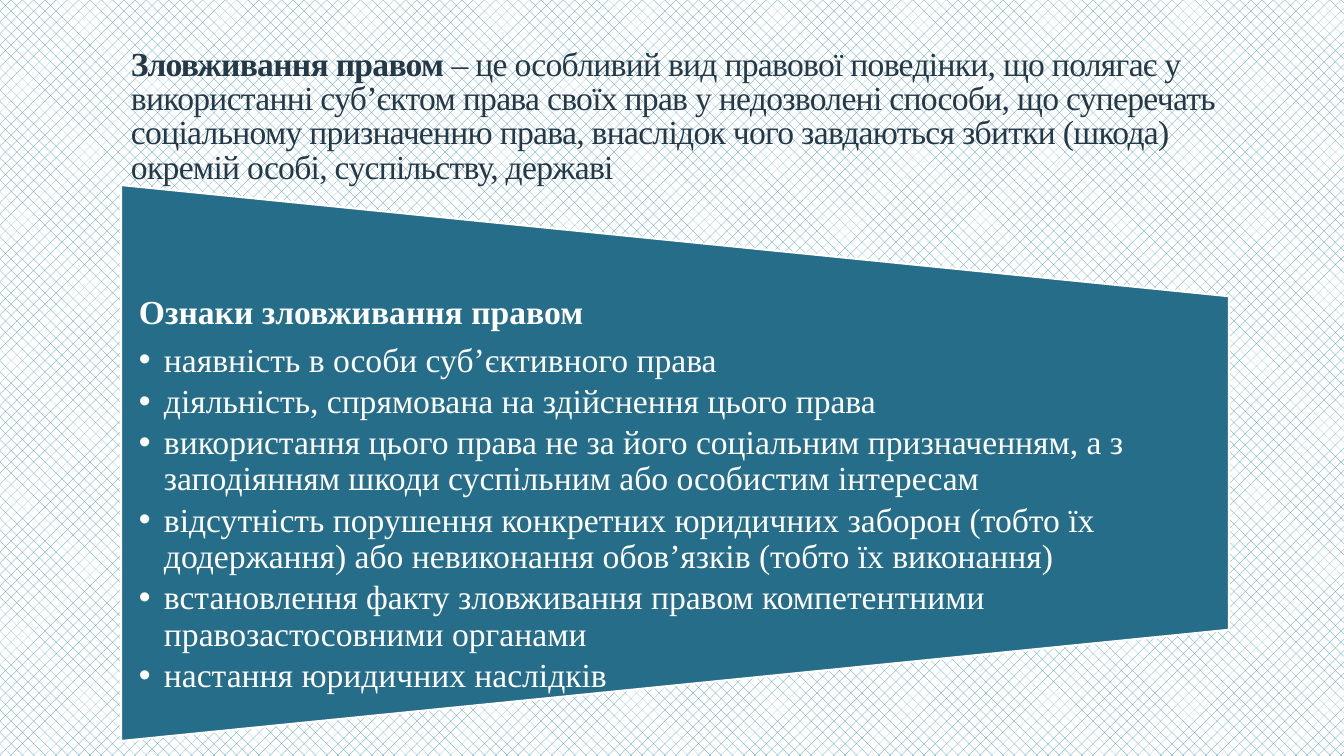
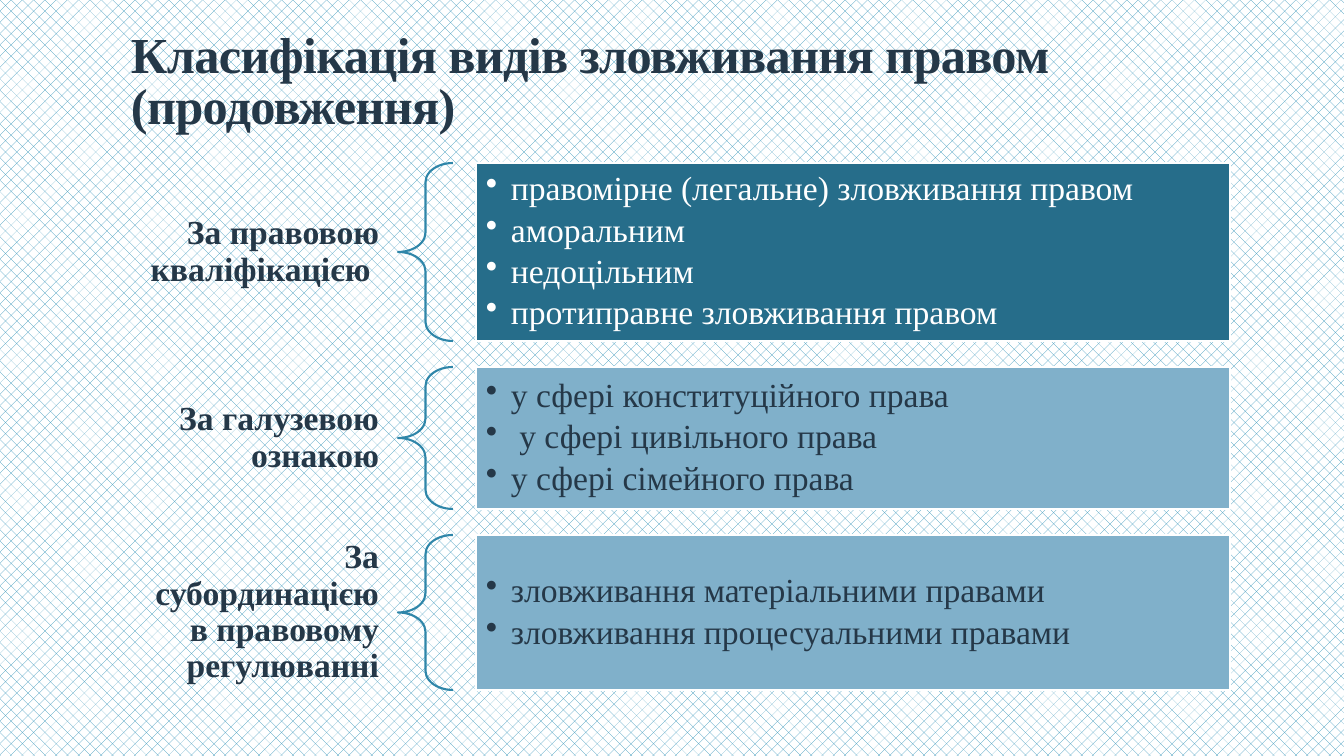
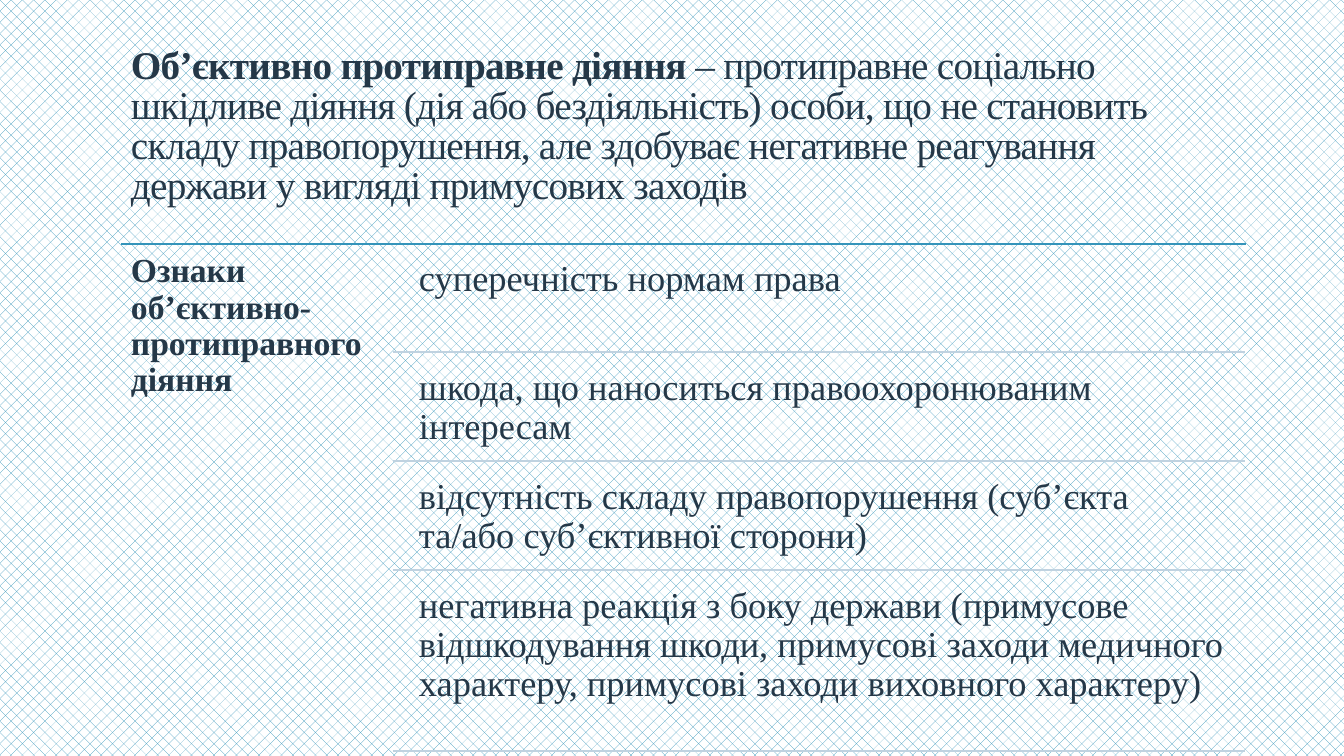
from dataclasses import dataclass

from lxml import etree
from pptx import Presentation
from pptx.dml.color import RGBColor
from pptx.enum.dml import MSO_PATTERN
from pptx.enum.shapes import MSO_CONNECTOR, MSO_SHAPE
from pptx.enum.text import MSO_ANCHOR, MSO_AUTO_SIZE, PP_ALIGN
from pptx.oxml.ns import qn
from pptx.util import Pt

TOP, MIDDLE, BOTTOM = MSO_ANCHOR.TOP, MSO_ANCHOR.MIDDLE, MSO_ANCHOR.BOTTOM
LEFT, RIGHT = PP_ALIGN.LEFT, PP_ALIGN.RIGHT
RECTANGLE, BRACE = MSO_SHAPE.RECTANGLE, MSO_SHAPE.LEFT_BRACE
TRAPEZOID = MSO_SHAPE.FLOWCHART_MANUAL_OPERATION
STRAIGHT = MSO_CONNECTOR.STRAIGHT
HATCH = MSO_PATTERN.PERCENT_25
NO_AUTOFIT = MSO_AUTO_SIZE.NONE
TITLE_ONLY, TITLE_AND_BODY = 5, 1

EMU_PER_PX = 914400 / 100.8
SLIDE_W, SLIDE_H = 1344, 756
MARGIN, CONTENT_W = 121, 1109


def px(length):
    return round(length * EMU_PER_PX)


@dataclass(frozen=True)
class Theme:
    font: str = "Times New Roman"
    ink: str = "253848"
    white: str = "FFFFFF"
    accent: str = "3494BA"
    deep: str = "266D8A"
    soft: str = "80B0CA"
    brace: str = "2F86A9"
    divider: str = "BFD2E0"
    heading_size: int = 36
    definition_size: int = 28
    row_size: int = 26
    text_size: int = 24
    line_width: float = 1.5
    title_spacing: float = 0.85
    text_spacing: float = 0.9
    block_gap: float = 0.35
    bullet_gap: float = 0.15
    bullet_indent: int = 25
    tracking: int = -50


class Deck:
    def __init__(self, theme):
        self.theme = theme
        self.slide = None
        self.prs = Presentation()
        self.prs.slide_width, self.prs.slide_height = px(SLIDE_W), px(SLIDE_H)
        fill = self.prs.slide_master.background.fill
        fill.patterned()
        fill.pattern = HATCH
        fill.fore_color.rgb = RGBColor.from_string(theme.accent)
        fill.back_color.rgb = RGBColor.from_string(theme.white)

    def new_slide(self, layout=TITLE_ONLY):
        self.slide = self.prs.slides.add_slide(self.prs.slide_layouts[layout])

    # Text
    def frame(self, shape, anchor, inset_x, inset_y):
        frame = shape.text_frame
        frame.word_wrap = True
        frame.auto_size = NO_AUTOFIT
        frame.vertical_anchor = anchor
        frame.margin_left = frame.margin_right = px(inset_x)
        frame.margin_top = frame.margin_bottom = px(inset_y)
        return frame

    def paragraph(self, frame, runs, size, color, align=LEFT, spacing=None,
                  gap=0, bullet=False, tracking=None):
        """Add a paragraph of (text, bold) runs; gap is a share of the size."""
        first = frame.paragraphs[0]
        par = frame.add_paragraph() if first.runs else first
        par.alignment = align
        par.line_spacing = spacing or self.theme.text_spacing
        par.space_before = Pt(0)
        par.space_after = Pt(size * gap)
        self.bullet(par, bullet)
        for text, bold in runs:
            run = par.add_run()
            run.text = text
            run.font.name = self.theme.font
            run.font.size = Pt(size)
            run.font.bold = bold
            run.font.color.rgb = RGBColor.from_string(color)
            if tracking:
                run.font._element.set("spc", str(tracking))

    def bullet(self, par, shown):
        indent = px(self.theme.bullet_indent) if shown else 0
        props = par._p.get_or_add_pPr()
        props.set("marL", str(indent))
        props.set("indent", str(-indent))
        if shown:
            par.level = 1
            etree.SubElement(props, qn("a:buChar")).set("char", "•")
        else:
            etree.SubElement(props, qn("a:buNone"))

    def bullets(self, frame, items, color):
        for item in items:
            self.paragraph(frame, [(item, False)], self.theme.text_size, color,
                           gap=self.theme.bullet_gap, bullet=True)

    def place(self, shape, left, top, width, height):
        shape.left, shape.top = px(left), px(top)
        shape.width, shape.height = px(width), px(height)

    def title(self, top, height, size, runs):
        title = self.slide.shapes.title
        self.place(title, MARGIN, top, CONTENT_W, height)
        self.paragraph(self.frame(title, BOTTOM, 10, 5), runs, size,
                       self.theme.ink, spacing=self.theme.title_spacing,
                       tracking=self.theme.tracking)

    def body(self, box, heading, items, color):
        body = self.slide.placeholders[1]
        self.place(body, *box)
        body.element.getparent().append(body.element)  # in front of the panel
        frame = self.frame(body, TOP, 17, 0)
        self.paragraph(frame, [(heading, True)], self.theme.text_size, color,
                       gap=self.theme.block_gap)
        self.bullets(frame, items, color)

    def text(self, box, words, size, bold=False, align=LEFT, anchor=TOP,
             inset_x=10, inset_y=10):
        shape = self.slide.shapes.add_textbox(*map(px, box))
        self.paragraph(self.frame(shape, anchor, inset_x, inset_y),
                       [(words, bold)], size, self.theme.ink, align,
                       gap=self.theme.block_gap)

    # Shapes and lines
    def outline(self, item, color):
        item.line.color.rgb = RGBColor.from_string(color)
        item.line.width = Pt(self.theme.line_width)

    def shape(self, kind, box, line, fill=None):
        shape = self.slide.shapes.add_shape(kind, *map(px, box))
        shape.shadow.inherit = False
        self.outline(shape, line)
        if fill:
            shape.fill.solid()
            shape.fill.fore_color.rgb = RGBColor.from_string(fill)
        else:
            shape.fill.background()
        return shape

    def list_panel(self, box, items, fill, color):
        panel = self.shape(RECTANGLE, box, self.theme.white, fill)
        self.bullets(self.frame(panel, MIDDLE, 10, 10), items, color)

    def rule(self, left, right, y, color):
        rule = self.slide.shapes.add_connector(
            STRAIGHT, px(left), px(y), px(right), px(y))
        self.outline(rule, color)
        etree.SubElement(rule.element.spPr, qn("a:effectLst"))


def abuse_of_right(deck):
    theme = deck.theme
    deck.new_slide(TITLE_AND_BODY)
    deck.title(31, 160, theme.text_size, [
        ("Зловживання правом", True),
        (" – це особливий вид правової поведінки, що полягає у використанні "
         "суб’єктом права своїх прав у недозволені способи, що суперечать "
         "соціальному призначенню права, внаслідок чого завдаються збитки "
         "(шкода) окремій особі, суспільству, державі", False)])
    panel = deck.shape(TRAPEZOID, (397, -91, 556, 1108), theme.white, theme.deep)
    panel.rotation = 270
    deck.body((122, 295, 1108, 334), "Ознаки зловживання правом", [
        "наявність в особи суб’єктивного права",
        "діяльність, спрямована на здійснення цього права",
        "використання цього права не за його соціальним призначенням, а з "
        "заподіянням шкоди суспільним або особистим інтересам",
        "відсутність порушення конкретних юридичних заборон (тобто їх "
        "додержання) або невиконання обов’язків (тобто їх виконання)",
        "встановлення факту зловживання правом компетентними "
        "правозастосовними органами",
        "настання юридичних наслідків"], theme.white)


def classification(deck):
    theme = deck.theme
    deck.new_slide()
    deck.title(66, 74, theme.heading_size, [
        ("Класифікація видів зловживання правом (продовження)", True)])
    # One row per criterion: label, brace, list of kinds
    criteria = [
        ("За правовою кваліфікацією ", 178, theme.deep, theme.white,
         ["правомірне (легальне) зловживання правом", "аморальним",
          "недоцільним", "протиправне зловживання правом"]),
        ("За галузевою ознакою", 142, theme.soft, theme.ink,
         ["у сфері конституційного права", " у сфері цивільного права",
          "у сфері сімейного права"]),
        ("За субординацією в правовому регулюванні", 155, theme.soft, theme.ink,
         ["зловживання матеріальними правами",
          "зловживання процесуальними правами"])]
    top, row_gap = 163, 26
    for label, height, fill, color, kinds in criteria:
        deck.text((MARGIN, top, 277, height), label, theme.text_size, True,
                  RIGHT, MIDDLE, 19, 7)
        brace = deck.shape(BRACE, (398, top, 55, height), theme.brace)
        brace.adjustments[0] = 0.35
        deck.list_panel((476, top, 754, height), kinds, fill, color)
        top += height + row_gap


def unlawful_act(deck):
    theme = deck.theme
    deck.new_slide()
    deck.title(53, 160, theme.definition_size, [
        ("Об’єктивно протиправне діяння ", True),
        ("– протиправне соціально шкідливе діяння (дія або бездіяльність) "
         "особи, що не становить складу правопорушення, але здобуває "
         "негативне реагування держави у вигляді примусових заходів", False)])
    # Heading column
    deck.rule(MARGIN, 1246, 244, theme.accent)
    deck.text((MARGIN, 244, 272, 512), "Ознаки об’єктивно-протиправного діяння",
              theme.text_size, True)
    # Features, each closed by a divider
    features = [
        ("суперечність нормам права", 103),
        ("шкода, що наноситься правоохоронюваним інтересам", 103),
        ("відсутність складу правопорушення (суб’єкта та/або суб’єктивної "
         "сторони)", 103),
        ("негативна реакція з боку держави (примусове відшкодування шкоди, "
         "примусові заходи медичного характеру, примусові заходи виховного "
         "характеру)", 175)]
    top, row_gap = 249, 6
    for feature, height in features:
        deck.text((408, top, 837, height), feature, theme.row_size,
                  inset_x=11, inset_y=11)
        deck.rule(393, 1245, top + height, theme.divider)
        top += height + row_gap


def main():
    deck = Deck(Theme())
    abuse_of_right(deck)
    classification(deck)
    unlawful_act(deck)
    deck.prs.save("out.pptx")


if __name__ == "__main__":
    main()
